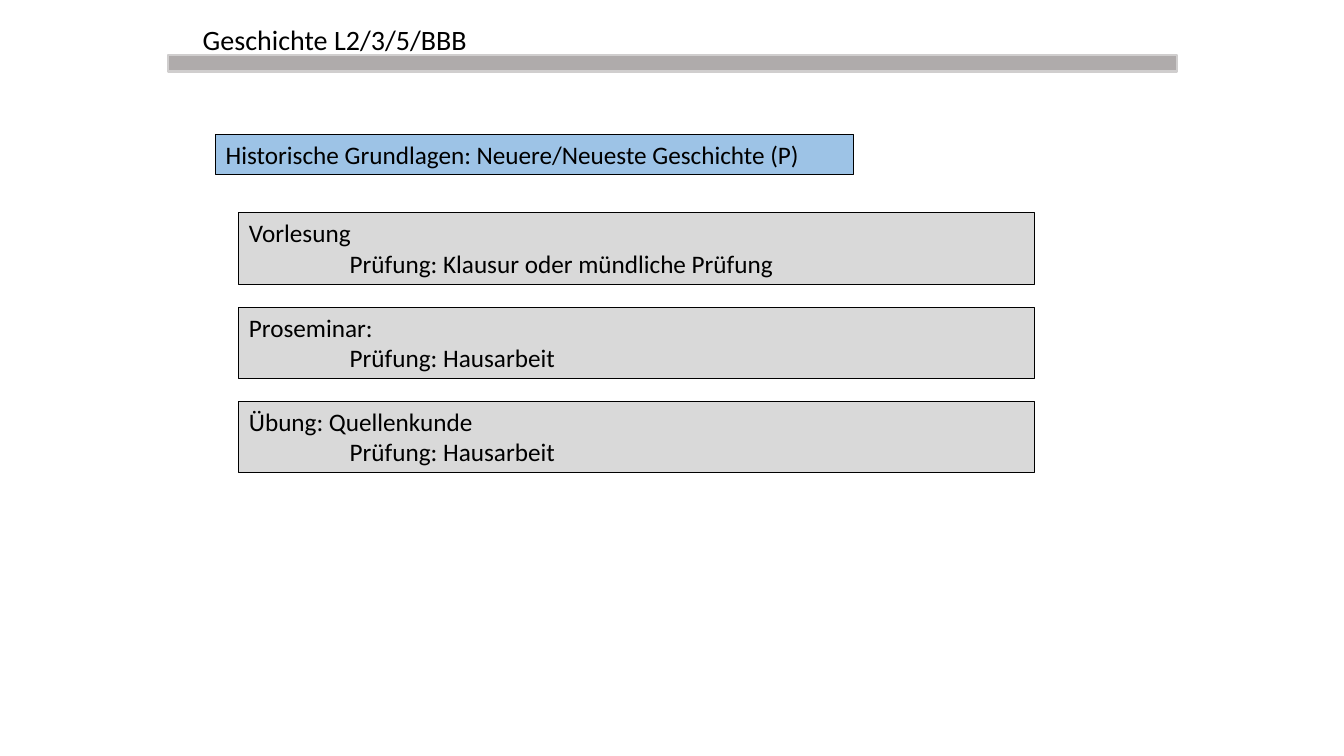
from pptx import Presentation
from pptx.dml.color import RGBColor
from pptx.enum.shapes import MSO_SHAPE
from pptx.enum.text import MSO_ANCHOR, PP_ALIGN
from pptx.util import Inches, Pt

# Content
TITLE = "Geschichte L2/3/5/BBB"
MODULE = "Historische Grundlagen: Neuere/Neueste Geschichte (P)"
COURSES = [
    ("Vorlesung", "Prüfung: Klausur oder mündliche Prüfung"),
    ("Proseminar:", "Prüfung: Hausarbeit"),
    ("Übung: Quellenkunde", "Prüfung: Hausarbeit"),
]

# Style
FONT = "Calibri"
BLACK = RGBColor(0x00, 0x00, 0x00)
BLUE = RGBColor(0x9D, 0xC3, 0xE6)
LIGHT_GREY = RGBColor(0xD9, 0xD9, 0xD9)
BAR_GREY = RGBColor(0xAF, 0xAB, 0xAB)
BAR_LINE = RGBColor(0xD0, 0xCE, 0xCE)

# Layout in inches
COURSE_TOPS = (2.11, 3.05, 3.98)
TAB_WIDTH = Inches(1)


def format_text(tf, size):
    tf.word_wrap = True
    tf.vertical_anchor = MSO_ANCHOR.TOP
    for p in tf.paragraphs:
        p.alignment = PP_ALIGN.LEFT
        p._p.get_or_add_pPr().set("defTabSz", str(TAB_WIDTH))
        for r in p.runs:
            r.font.name = FONT
            r.font.size = Pt(size)
            r.font.color.rgb = BLACK


def add_box(s, left, top, width, height, fill, line=BLACK, weight=0.75, text=""):
    sp = s.shapes.add_shape(MSO_SHAPE.RECTANGLE, Inches(left), Inches(top),
                            Inches(width), Inches(height))
    sp.shadow.inherit = False
    sp.fill.solid()
    sp.fill.fore_color.rgb = fill
    sp.line.color.rgb = line
    sp.line.width = Pt(weight)
    if text:
        sp.text_frame.text = text
        format_text(sp.text_frame, 18)


def main():
    prs = Presentation()
    prs.slide_width, prs.slide_height = Inches(13.33), Inches(7.5)
    s = prs.slides.add_slide(prs.slide_layouts[5])

    # Title above the bar
    title = s.shapes.title
    title.left, title.top = Inches(1.67), Inches(0.17)
    title.width, title.height = Inches(10), Inches(0.46)
    title.text_frame.text = TITLE
    title.text_frame.margin_left = Inches(0.34)
    format_text(title.text_frame, 20)
    add_box(s, 1.67, 0.55, 10, 0.16, BAR_GREY, BAR_LINE, 1.5)

    # Module heading
    add_box(s, 2.14, 1.33, 6.33, 0.4, BLUE, text=MODULE)

    # Courses, each with its exam on a tabbed second line
    for top, (course, exam) in zip(COURSE_TOPS, COURSES):
        add_box(s, 2.37, top, 7.89, 0.71, LIGHT_GREY, text=f"{course}\n\t{exam}")

    prs.save("out.pptx")


if __name__ == "__main__":
    main()
